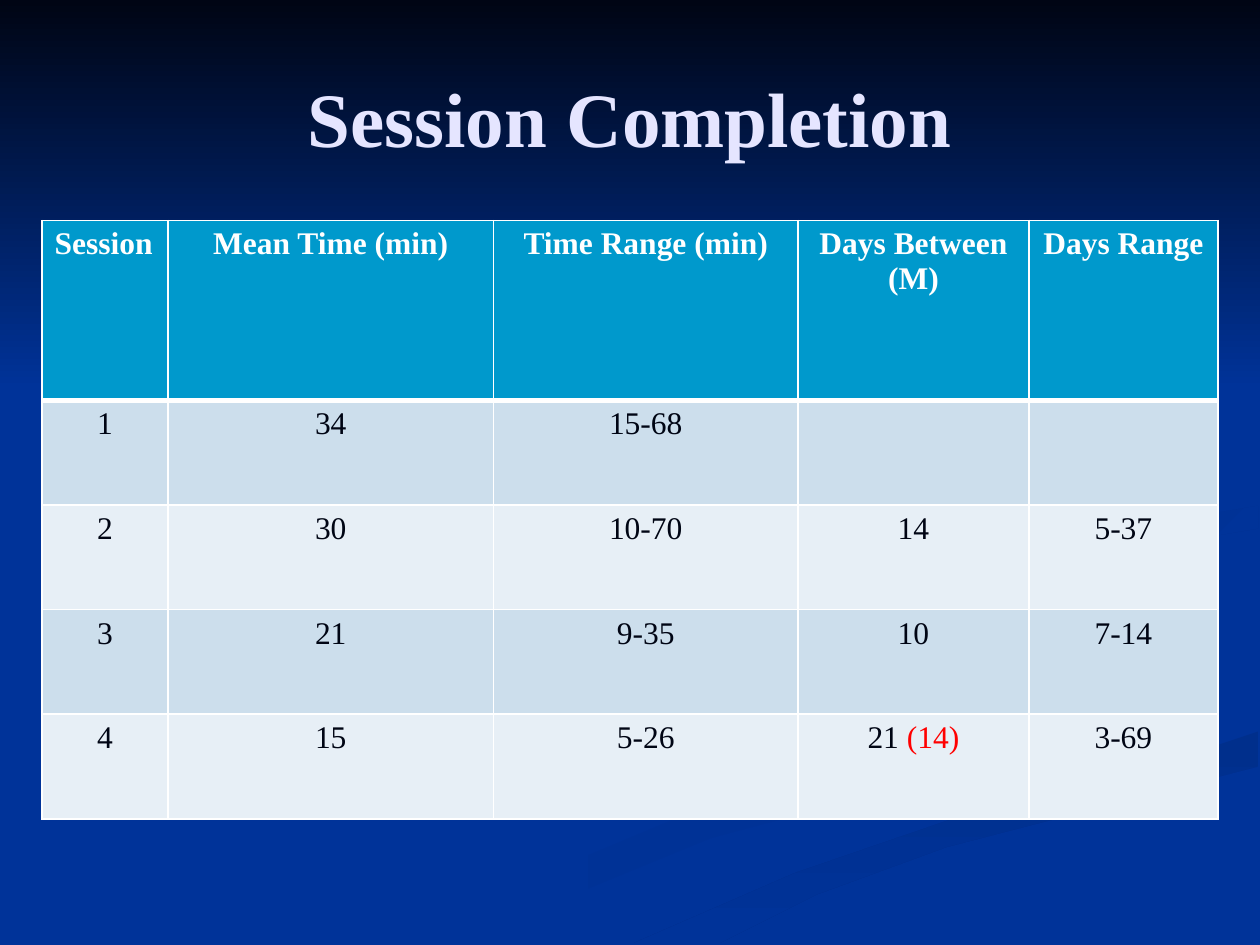
from pptx import Presentation
from pptx.dml.color import RGBColor
from pptx.enum import shapes, text
from pptx.oxml import xmlchemy
from pptx.util import Pt

BLUE = RGBColor(0x00, 0x33, 0x99)
NIGHT = RGBColor(0x00, 0x05, 0x14)
LILAC = RGBColor(0xE5, 0xE5, 0xFF)
WHITE = RGBColor(0xFF, 0xFF, 0xFF)
RED = RGBColor(0xFF, 0x00, 0x00)
CYAN = RGBColor(0x00, 0x99, 0xCC)
MIST = RGBColor(0xCC, 0xDE, 0xEC)
PALE = RGBColor(0xE7, 0xEF, 0xF6)
SHADE = RGBColor(0x00, 0x31, 0x93)
DEEP = RGBColor(0x00, 0x2F, 0x8C)
FONT = "Times New Roman"

RIBBONS = [
    (BLUE, SHADE, 0, [
        (562, 398), (491, 374), (428, 349), (414, 330), (415, 346), (471, 369),
        (562, 400), (546, 425), (388, 467), (216, 539), (260, 539), (406, 479),
        (544, 442), (576, 418)]),
    (BLUE, SHADE, 45, [
        (679, 410), (639, 385), (557, 362), (521, 334), (544, 364), (634, 396),
        (661, 418), (644, 436), (678, 418)]),
    (DEEP, BLUE, 90, [
        (362, 539), (411, 539), (467, 511), (541, 484), (719, 438), (719, 418),
        (674, 433), (550, 466), (454, 499)]),
    (SHADE, BLUE, 45, [
        (562, 331), (595, 357), (580, 343), (618, 319), (719, 302), (719, 289),
        (611, 307), (575, 318)]),
    (DEEP, BLUE, 45, [
        (492, 310), (594, 289), (640, 261), (634, 221), (549, 168), (616, 205),
        (638, 251), (589, 278), (450, 307), (415, 333), (448, 360), (429, 332)]),
]

COLS = [72, 186, 174, 132, 108]
ROWS = [102.8] + [59.8] * 4
DATA = [
    ["Session", "Mean Time (min)", "Time Range (min)", "Days Between (M)", "Days Range"],
    ["1", "34", "15-68", "", ""],
    ["2", "30", "10-70", "14", "5-37"],
    ["3", "21", "9-35", "10", "7-14"],
    ["4", "15", "5-26", "21 ", "3-69"],
]


def blend(shape, first, last, angle):
    shape.shadow.inherit = False
    shape.line.fill.background()
    shape.fill.gradient()
    shape.fill.gradient_angle = 360 - angle
    for stop, color in zip(shape.fill.gradient_stops, (first, last)):
        stop.color.rgb = color


def ribbon(slide, first, last, angle, points):
    pen = slide.shapes.build_freeform(*points[0], scale=Pt(1))
    pen.add_line_segments(points[1:], close=True)
    blend(pen.convert_to_shape(), first, last, angle)


def style(run, size, color, bold):
    run.font.name = FONT
    run.font.size = Pt(size)
    run.font.color.rgb = color
    run.font.bold = bold


def heading(slide, words):
    title = slide.shapes.title
    title.left, title.top, title.width, title.height = Pt(36), Pt(21.6), Pt(648), Pt(90)
    frame = title.text_frame
    frame.text = words
    frame.vertical_anchor = text.MSO_ANCHOR.MIDDLE
    line = frame.paragraphs[0]
    line.alignment = text.PP_ALIGN.CENTER
    style(line.runs[0], 44, LILAC, True)
    title.element.getparent().append(title.element)


def border(cell, side, width):
    props = cell._tc.get_or_add_tcPr()
    edge = xmlchemy.OxmlElement(f"a:ln{side}")
    edge.set("w", str(Pt(width)))
    fill = xmlchemy.OxmlElement("a:solidFill")
    color = xmlchemy.OxmlElement("a:srgbClr")
    color.set("val", str(WHITE))
    fill.append(color)
    edge.append(fill)
    props.append(edge)


def fill_cell(cell, words, row, col):
    head = row == 0
    widths = {"L": 1, "R": 1, "T": 3 if row == 1 else 1, "B": 3 if head else 1}
    for side, width in widths.items():
        border(cell, side, width)
    cell.fill.solid()
    cell.fill.fore_color.rgb = CYAN if head else MIST if row % 2 else PALE
    cell.text_frame.text = words
    line = cell.text_frame.paragraphs[0]
    if row or col:
        line.alignment = text.PP_ALIGN.CENTER
    for run in line.runs:
        style(run, 18, WHITE if head else NIGHT, head)


def grid(slide):
    frame = slide.shapes.add_table(len(ROWS), len(COLS), Pt(24), Pt(126),
                                   Pt(sum(COLS)), Pt(sum(ROWS)))
    table = frame.table
    for col, width in zip(table.columns, COLS):
        col.width = Pt(width)
    for row, height in zip(table.rows, ROWS):
        row.height = Pt(height)
    for r, line in enumerate(DATA):
        for c, words in enumerate(line):
            fill_cell(table.cell(r, c), words, r, c)
    note = table.cell(4, 3).text_frame.paragraphs[0].add_run()
    note.text = "(14)"
    style(note, 18, RED, False)


def main():
    deck = Presentation()
    deck.slide_width, deck.slide_height = Pt(720), Pt(540)
    slide = deck.slides.add_slide(deck.slide_layouts[5])
    slide.background.fill.solid()
    slide.background.fill.fore_color.rgb = BLUE
    for item in RIBBONS:
        ribbon(slide, *item)
    sky = slide.shapes.add_shape(shapes.MSO_SHAPE.RECTANGLE, 0, 0, Pt(720), Pt(222))
    blend(sky, NIGHT, BLUE, 90)
    heading(slide, "Session Completion")
    grid(slide)
    deck.save("out.pptx")


if __name__ == "__main__":
    main()
